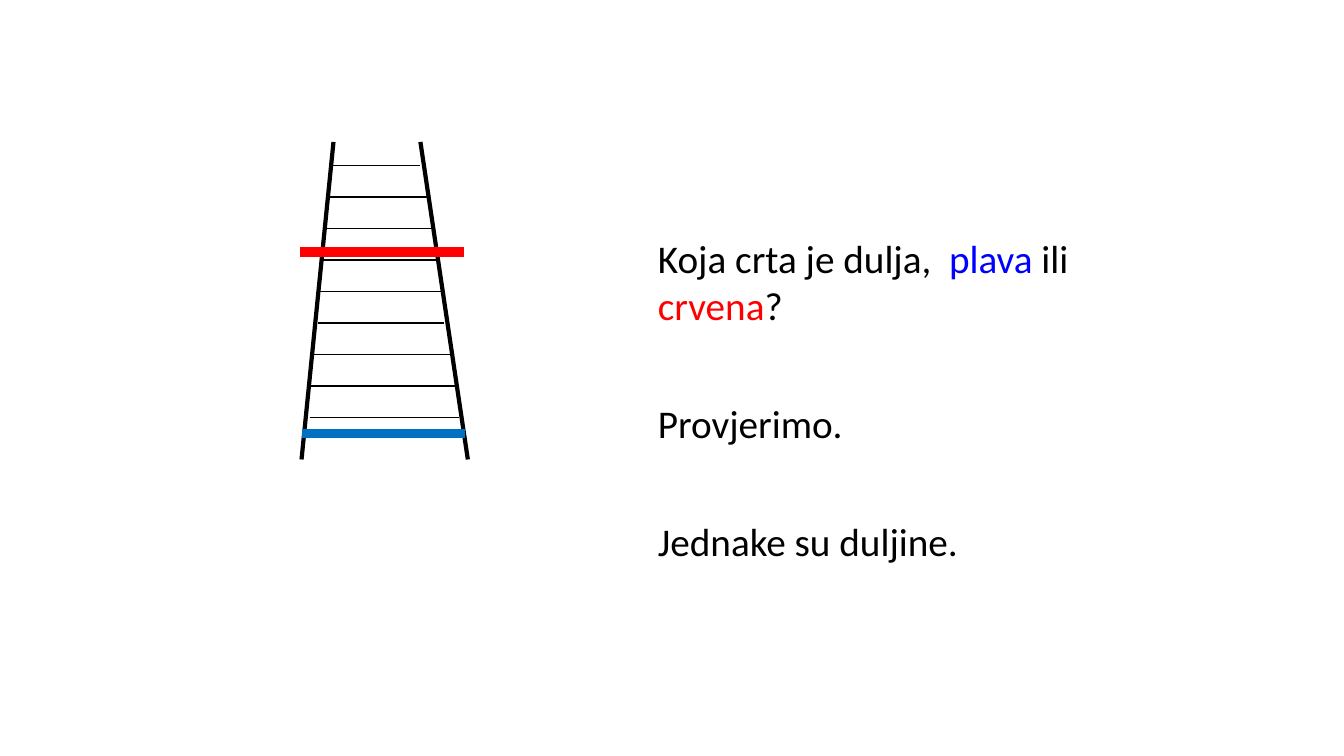
from pptx import Presentation
from pptx import util as u
from pptx.dml.color import RGBColor
from pptx.enum import shapes, text
from pptx.oxml.ns import qn
from lxml import etree

BLACK = RGBColor(0x00, 0x00, 0x00)
BLUE_BAR = RGBColor(0x00, 0x70, 0xC0)
BLUE_WORD = RGBColor(0x00, 0x00, 0xFF)
RED = RGBColor(0xFF, 0x00, 0x00)

WIDTH, HEIGHT = u.Inches(13.33), u.Inches(7.5)
COL, ROW = WIDTH / 160, HEIGHT / 90

RAIL_TOP, RAIL_FOOT = 16.9, 54.7
RAILS = [(35.9, 39.7), (55.7, 50.05)]
RUNG_TOP, RUNG_STEP = 19.7, 3.75
RUNGS = [(39.7, 50.05), (38.75, 50.9), (38.75, 51.5),
         (38.15, 51.85), (37.8, 52.8), (37.8, 52.8),
         (36.85, 53.75), (36.85, 54.7), (36.85, 54.7)]
TEXT_LEFT, TEXT_COLS = 77.15, 61.45


def x(cols):
    return round(cols * COL)


def y(rows):
    return round(rows * ROW)


def add_line(parent, start, end, color, points):
    s = parent.add_connector(shapes.MSO_CONNECTOR.STRAIGHT,
                             x(start[0]), y(start[1]), x(end[0]), y(end[1]))
    s.line.color.rgb = color
    s.line.width = u.Pt(points)
    etree.SubElement(s._element.spPr, qn("a:effectLst"))


def add_ladder(slide):
    ladder = slide.shapes.add_group_shape().shapes
    for foot, top in RAILS:
        add_line(ladder, (foot, RAIL_FOOT), (top, RAIL_TOP), BLACK, 3)
    for i, (left, right) in enumerate(RUNGS):
        row = RUNG_TOP + i * RUNG_STEP
        add_line(ladder, (left, row), (right, row), BLACK, 1)


def add_text(slide, top, rows, runs):
    s = slide.shapes.add_textbox(x(TEXT_LEFT), y(top), x(TEXT_COLS), y(rows))
    tf = s.text_frame
    tf.word_wrap = True
    tf.auto_size = text.MSO_AUTO_SIZE.SHAPE_TO_FIT_TEXT
    p = tf.paragraphs[0]
    for words, color in runs:
        r = p.add_run()
        r.text = words
        r.font.name = "Calibri"
        r.font.size = u.Pt(28)
        r.font.color.rgb = color


def main():
    prs = Presentation()
    prs.slide_width, prs.slide_height = WIDTH, HEIGHT
    slide = prs.slides.add_slide(prs.slide_layouts[6])
    add_ladder(slide)
    add_line(slide.shapes, (35.9, 51.6), (55.3, 51.6), BLUE_BAR, 7)
    add_line(slide.shapes, (35.75, 30), (55.2, 30), RED, 7)
    add_text(slide, 27.25, 12.5, [("Koja crta je dulja,  ", BLACK),
                                  ("plava", BLUE_WORD), (" ili ", BLACK),
                                  ("crvena", RED), ("?", BLACK)])
    add_text(slide, 46.9, 6.85, [("Provjerimo.", BLACK)])
    add_text(slide, 60.95, 6.85, [("Jednake su duljine.", BLACK)])
    prs.save("out.pptx")


if __name__ == "__main__":
    main()
